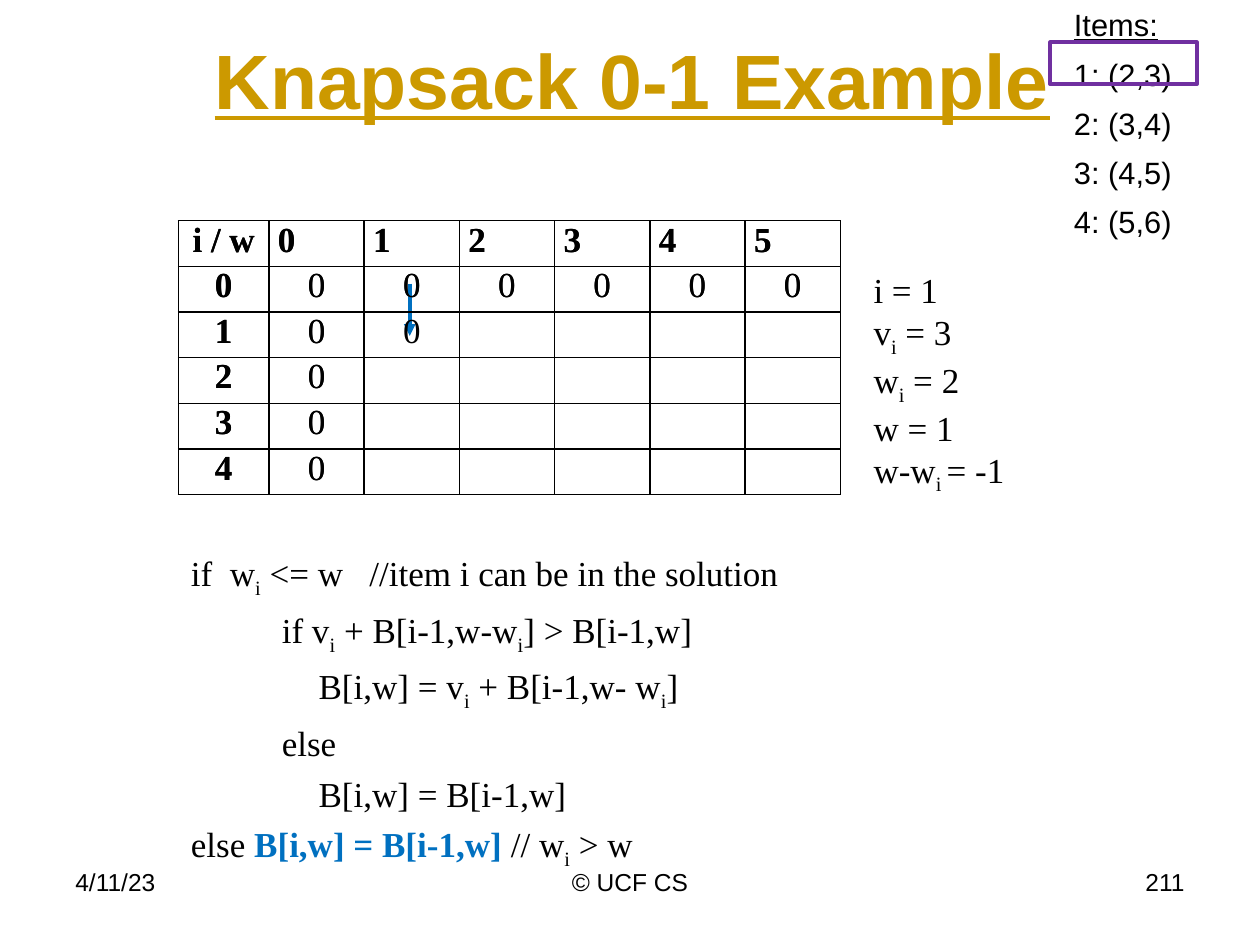
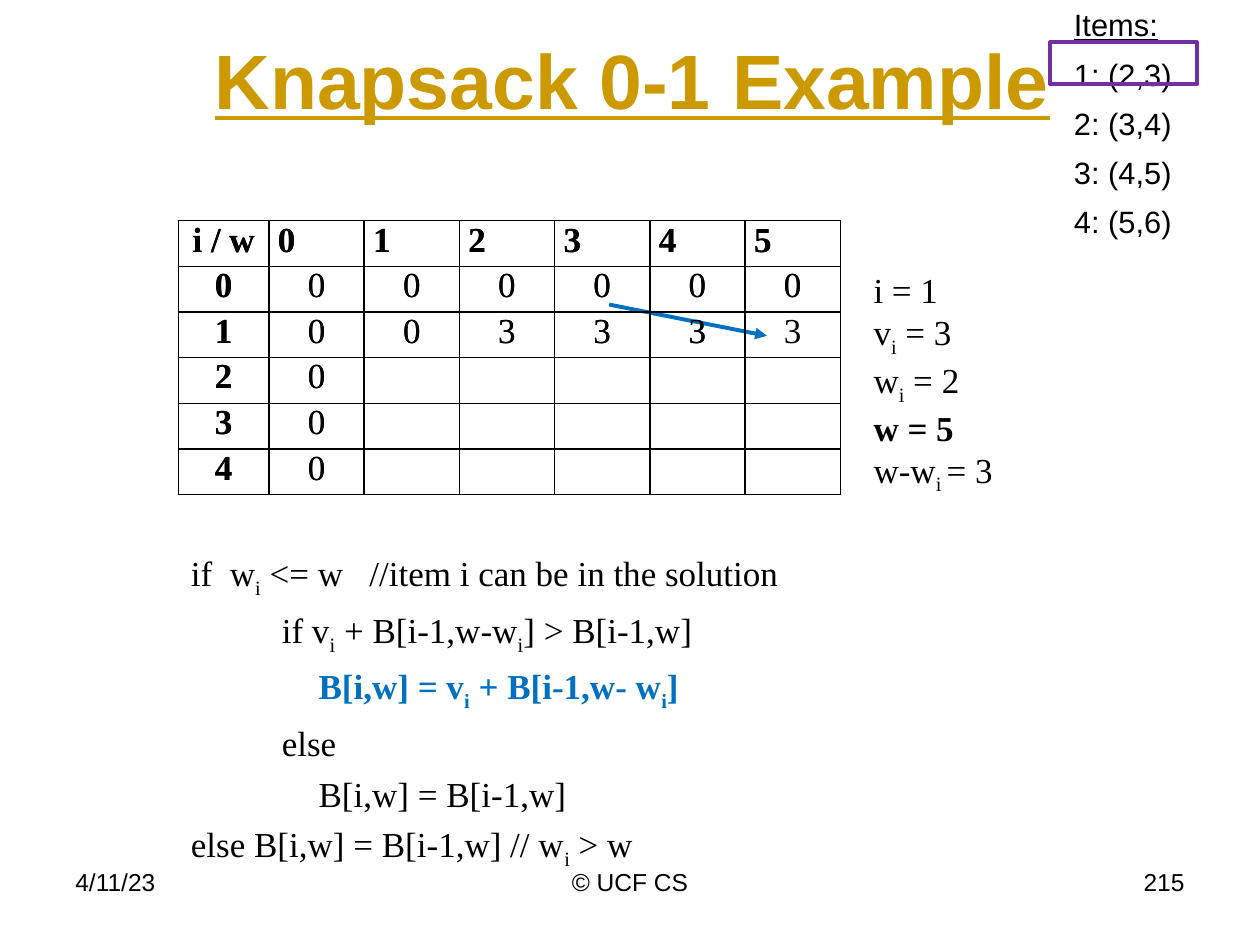
"""Build two steps of the 0-1 knapsack table walk-through."""
from lxml.etree import SubElement
from pptx import Presentation
from pptx.dml.color import RGBColor
from pptx.enum.shapes import MSO_CONNECTOR, MSO_SHAPE
from pptx.enum.text import MSO_ANCHOR, MSO_AUTO_SIZE, PP_ALIGN
from pptx.oxml.ns import qn
from pptx.util import Cm, Pt

GOLD = RGBColor(0xCC, 0x99, 0x00)
BLUE = RGBColor(0x00, 0x70, 0xC0)
PURPLE = RGBColor(0x70, 0x30, 0xA0)
BLACK = RGBColor(0, 0, 0)
SANS, SERIF = "Arial", "Times New Roman"

ITEMS = ["Items:", "1: (2,3)", "2: (3,4)", "3: (4,5)", "4: (5,6)"]
CAPACITIES = ["0", "1", "2", "3", "4", "5"]
ITEM_ROWS = ["1", "2", "3", "4"]
ALGORITHM = [
    "if  w~i~ <= w   //item i can be in the solution",
    "\t     if v~i~ + B[i-1,w-w~i~] > B[i-1,w]",
    "\t\t  B[i,w] = v~i~ + B[i-1,w- w~i~]",
    "\t     else",
    "\t\t  B[i,w] = B[i-1,w]",
    "else B[i,w] = B[i-1,w] // w~i~ > w",
]
TAKE_ITEM = "B[i,w] = v~i~ + B[i-1,w- w~i~]"
SKIP_ITEM = "else B[i,w] = B[i-1,w] "


class KnapsackDeck:
    """Holds the deck style and the slide being filled."""

    def __init__(self):
        self.deck = Presentation()
        self.deck.slide_width, self.deck.slide_height = Cm(25.4), Cm(19.05)
        self.slide = None

    def style(self, paragraph, size, face, color=BLACK, bold=None, align=PP_ALIGN.LEFT):
        paragraph.alignment = align
        font = paragraph.font
        font.size, font.name, font.bold = Pt(size), face, bold
        font.color.rgb = color

    def runs(self, paragraph, markup, accent):
        """Write markup: *strong* in the accent colour, ~subscript~ below the line."""
        for strong, passage in enumerate(markup.split("*")):
            for lowered, piece in enumerate(passage.split("~")):
                if not piece:
                    continue
                run = paragraph.add_run()
                run.text = piece
                if strong % 2:
                    run.font.bold = True
                    run.font.color.rgb = accent
                if lowered % 2:
                    run.font._element.set("baseline", "-25000")

    def text(self, box, lines, size, face, align=PP_ALIGN.LEFT, gap=0, hanging=None,
             accent=BLUE, wrap=True):
        frame = self.slide.shapes.add_textbox(*map(Cm, box)).text_frame
        frame.word_wrap = wrap
        if not wrap:
            frame.auto_size = MSO_AUTO_SIZE.SHAPE_TO_FIT_TEXT
        for number, line in enumerate(lines):
            paragraph = frame.add_paragraph() if number else frame.paragraphs[0]
            if hanging:
                margin, indent = hanging
                properties = paragraph._p.get_or_add_pPr()
                properties.set("marL", str(Cm(margin)))
                properties.set("indent", str(Cm(indent)))
            if number and gap:
                paragraph.space_before = Pt(gap)
            self.style(paragraph, size, face, align=align)
            self.runs(paragraph, line, accent)
        return frame

    def title(self, words):
        self.slide = self.deck.slides.add_slide(self.deck.slide_layouts[5])
        heading = self.slide.shapes.title
        heading.left, heading.top, heading.width, heading.height = map(
            Cm, (2.33, 0, 20.83, 3.18))
        heading.text_frame.vertical_anchor = MSO_ANCHOR.MIDDLE
        heading.text_frame.text = words
        paragraph = heading.text_frame.paragraphs[0]
        self.style(paragraph, 44, SANS, GOLD, True, PP_ALIGN.CENTER)
        paragraph.font.underline = True

    def cell(self, cell, words, bold, align):
        cell.margin_left = cell.margin_right = Cm(0.18)
        cell.margin_top = cell.margin_bottom = 0
        cell.text = words
        self.style(cell.text_frame.paragraphs[0], 20, SERIF, BLACK, bold, align)
        properties = cell._tc.get_or_add_tcPr()
        for side in ("lnL", "lnR", "lnT", "lnB"):
            border = SubElement(properties, qn(f"a:{side}"), w=str(Pt(1)))
            fill = SubElement(border, qn("a:solidFill"))
            SubElement(fill, qn("a:srgbClr"), val=str(BLACK))
        cell.fill.background()

    def table(self, first_item_values):
        values = [["i / w", *CAPACITIES], ["0"] + ["0"] * len(CAPACITIES)]
        values += [[item, "0"] for item in ITEM_ROWS]
        values[2] = ["1", *first_item_values]
        rows, columns = len(values), len(CAPACITIES) + 1
        table = self.slide.shapes.add_table(
            rows, columns, Cm(3.6), Cm(4.45), Cm(13.34), Cm(0.92 * rows)).table
        table.first_row = table.horz_banding = False
        for number, column in enumerate(table.columns):
            column.width = Cm(1.92 if number else 1.82)
        for number, row in enumerate(table.rows):
            row.height = Cm(0.92)
            for position, cell in enumerate(row.cells):
                known = values[number]
                words = known[position] if position < len(known) else ""
                is_capacity = number == 0 and position > 0
                self.cell(cell, words, number == 0 or position == 0,
                          PP_ALIGN.LEFT if is_capacity else PP_ALIGN.CENTER)

    def arrow(self, start, end):
        arrow = self.slide.shapes.add_connector(
            MSO_CONNECTOR.STRAIGHT, *map(Cm, start + end))
        arrow.line.color.rgb, arrow.line.width = BLUE, Pt(2.25)
        SubElement(arrow.line._get_or_add_ln(), qn("a:tailEnd"), type="triangle")
        SubElement(arrow._element.spPr, qn("a:effectLst"))

    def item_marker(self):
        marker = self.slide.shapes.add_shape(
            MSO_SHAPE.RECTANGLE, *map(Cm, (21.17, 0.85, 2.96, 0.85)))
        marker.shadow.inherit = False
        marker.fill.background()
        marker.line.color.rgb, marker.line.width = PURPLE, Pt(2)

    def items(self):
        frame = self.text((21.17, 0, 2.96, 4.66), ITEMS, 17.6, SANS,
                          gap=7, hanging=(1.02, -0.79))
        frame.paragraphs[0].font.underline = True
        frame.paragraphs[0].runs[0].font.underline = True

    def footer(self, number):
        for left, width, words, align in (
                (1.27, 5.93, "4/11/23", PP_ALIGN.LEFT),
                (8.68, 8.04, "© UCF CS", PP_ALIGN.CENTER),
                (18.2, 5.93, number, PP_ALIGN.RIGHT)):
            self.text((left, 17.36, width, 1.32), [words], 14, SANS, align)

    def step(self, number, before, after, active, highlighted, state, start, end):
        self.title("Knapsack 0-1 Example")
        self.items()
        self.table(before)
        algorithm = [line.replace(active, highlighted) for line in ALGORITHM]
        self.text((3.6, 11, 17.98, 6.99), algorithm, 20, SERIF,
                  gap=5, hanging=(0.95, -0.95))
        self.text((17.36, 5.29, 3.2, 4.52), ["i = 1", "v~i~ = 3", "w~i~ = 2", *state],
                  20, SERIF, accent=BLACK, wrap=False)
        self.arrow(start, end)
        self.table(after)
        self.item_marker()
        self.footer(number)


def main():
    deck = KnapsackDeck()
    deck.step("211", ["0"], ["0", "0"], SKIP_ITEM, "else *B[i,w] = B[i-1,w] *",
              ["w = 1", "w-w~i ~= -1"], (8.26, 5.72), (8.26, 6.77))
    deck.step("215", ["0", "0", "3", "3", "3"], ["0", "0", "3", "3", "3", "3"],
              TAKE_ITEM, f"*{TAKE_ITEM}*",
              ["*w = 5*", "w-w~i ~= 3"], (12.28, 6.14), (15.46, 6.77))
    deck.deck.save("out.pptx")


if __name__ == "__main__":
    main()
